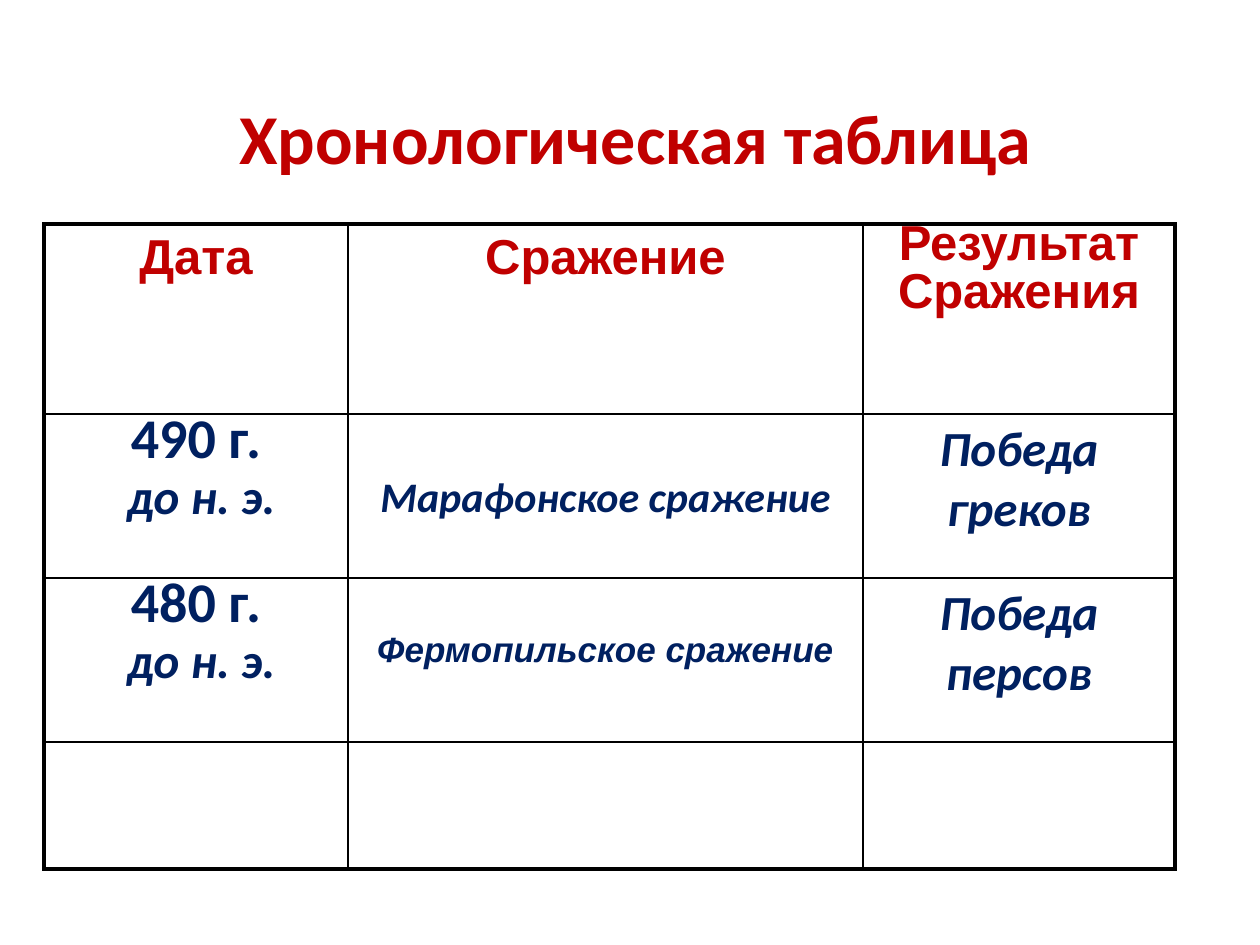
from lxml import etree
from pptx import Presentation
from pptx.dml.color import RGBColor
from pptx.enum.text import MSO_AUTO_SIZE, PP_ALIGN
from pptx.oxml.ns import qn
from pptx.util import Emu, Pt

CENTER = PP_ALIGN.CENTER
FIT_SHAPE = MSO_AUTO_SIZE.SHAPE_TO_FIT_TEXT
PX = 914400 // 126
COLORS = {"red": "C00000", "navy": "002060", "line": "000000"}
THICK, THIN = 2.25, 1

# Text styles: font, size, italic, colour
STYLES = {
    "title": ("Calibri", 40, False, "red"),
    "header": ("Arial", 28, False, "red"),
    "year": ("Calibri", 32, False, "navy"),
    "era": ("Calibri", 28, True, "navy"),
    "marathon": ("Calibri", 24, True, "navy"),
    "thermopylae": ("Arial", 20, True, "navy"),
    "result": ("Calibri", 28, True, "navy"),
}

# Content: each cell is (top margin px, paragraphs);
# each paragraph is (text, style, line spacing, space before pt)
TITLE = "Хронологическая таблица"


def date_cell(year):
    return 6, [(year, "year", 0.7, 0), (" до н. э.", "era", 0.4, 16)]


def line_cell(text, style, top=6):
    return top, [(text, style, 1.0, 0)]


ROWS = [
    [line_cell("Дата", "header"),
     line_cell("Сражение", "header"),
     (6, [("Результат", "header", 0.7, 0), ("Сражения", "header", 0.7, 5.6)])],
    [date_cell("490 г."),
     line_cell("Марафонское сражение", "marathon", 59),
     line_cell("Победа греков", "result")],
    [date_cell("480 г."),
     line_cell("Фермопильское сражение", "thermopylae", 53),
     line_cell("Победа персов", "result")],
    [(6, [])] * 3,
]

# Geometry in px
TITLE_BOX = (227, 88, 935, 97)
TABLE_ORIGIN = (44, 224)
COLUMN_WIDTHS = (304, 515, 312)
ROW_HEIGHTS = (190, 164, 164, 127)


def px(value):
    return Emu(value * PX)


def add_text(paragraph, text, style):
    name, size, italic, color = STYLES[style]
    run = paragraph.add_run()
    run.text = text
    formats = {"name": name, "size": Pt(size), "bold": True, "italic": italic}
    for attribute, value in formats.items():
        setattr(run.font, attribute, value)
    run.font.color.rgb = RGBColor.from_string(COLORS[color])


def set_borders(cell, widths):
    properties = cell._tc.get_or_add_tcPr()
    for index, (side, width) in enumerate(widths.items()):
        line = etree.Element(qn(f"a:ln{side}"), w=str(Pt(width)))
        fill = etree.SubElement(line, qn("a:solidFill"))
        etree.SubElement(fill, qn("a:srgbClr"), val=COLORS["line"])
        properties.insert(index, line)


def fill_cell(cell, top, paragraphs):
    cell.fill.background()
    cell.margin_top = px(top)
    frame = cell.text_frame
    for index, (text, style, spacing, before) in enumerate(paragraphs):
        paragraph = frame.add_paragraph() if index else frame.paragraphs[0]
        formats = {"alignment": CENTER, "line_spacing": spacing, "space_before": Pt(before)}
        for attribute, value in formats.items():
            setattr(paragraph, attribute, value)
        add_text(paragraph, text, style)


def add_battle_table(slide):
    size = (sum(COLUMN_WIDTHS), sum(ROW_HEIGHTS))
    last_row, last_column = len(ROWS) - 1, len(COLUMN_WIDTHS) - 1
    table = slide.shapes.add_table(
        last_row + 1, last_column + 1, *map(px, TABLE_ORIGIN + size)).table
    table.first_row = table.horz_banding = False
    for column, width in zip(table.columns, COLUMN_WIDTHS):
        column.width = px(width)
    for row, height in zip(table.rows, ROW_HEIGHTS):
        row.height = px(height)

    # The outer frame is thick, the inner grid is thin
    for r, row in enumerate(ROWS):
        for c, (top, paragraphs) in enumerate(row):
            cell = table.cell(r, c)
            fill_cell(cell, top, paragraphs)
            outer = {"L": c == 0, "R": c == last_column, "T": r == 0, "B": r == last_row}
            set_borders(cell, {side: THICK if edge else THIN for side, edge in outer.items()})


def add_title(slide):
    frame = slide.shapes.add_textbox(*map(px, TITLE_BOX)).text_frame
    frame.word_wrap = True
    frame.auto_size = FIT_SHAPE
    add_text(frame.paragraphs[0], TITLE, "title")


def main():
    presentation = Presentation()
    presentation.slide_width, presentation.slide_height = px(1260), px(945)
    slide = presentation.slides.add_slide(presentation.slide_layouts[6])
    add_battle_table(slide)
    add_title(slide)
    presentation.save("out.pptx")


if __name__ == "__main__":
    main()
